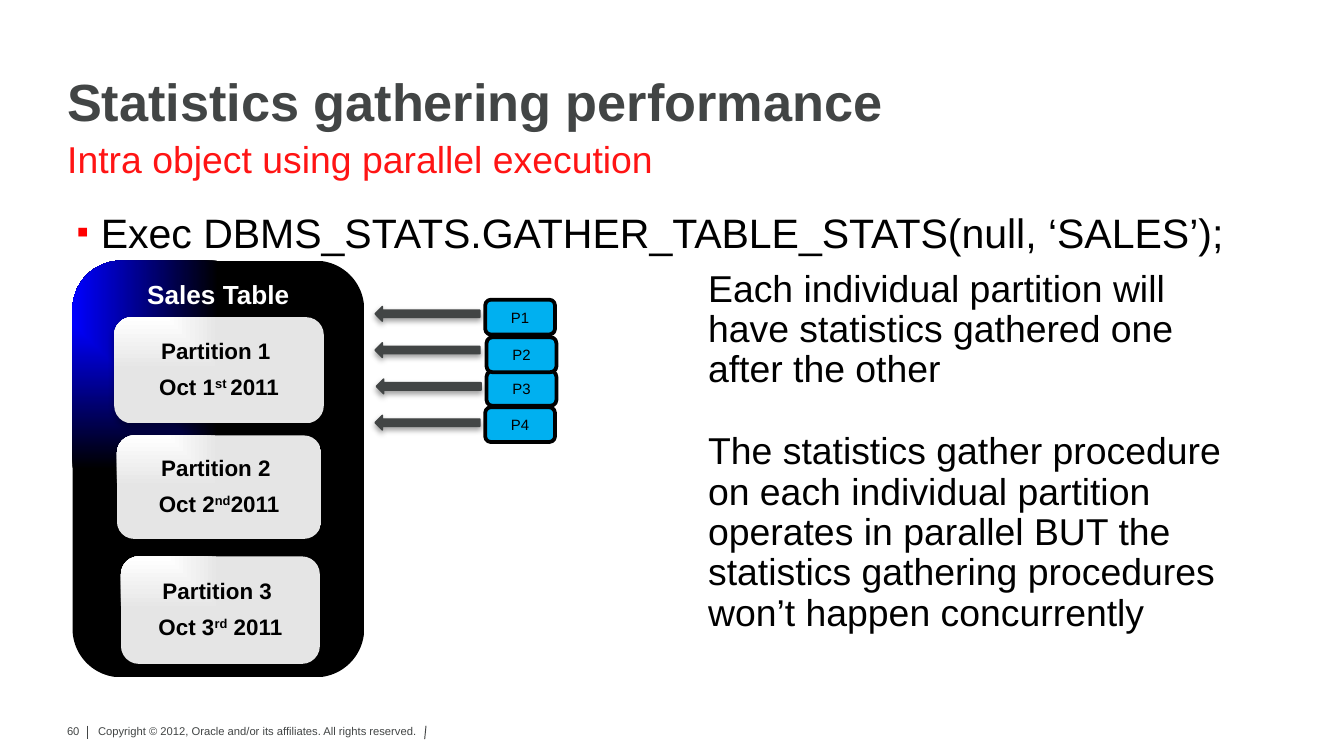
from lxml import etree
from pptx import Presentation
from pptx.dml.color import RGBColor
from pptx.enum import shapes, text
from pptx.oxml import parse_xml
from pptx.oxml.ns import nsdecls, qn
from pptx.util import Inches, Pt

GREY = "424545"
BLACK = "000000"
MSO = shapes.MSO_SHAPE
ALIGN = text.PP_ALIGN
ANCHOR = text.MSO_ANCHOR


def rgb(value):
    return RGBColor.from_string(value)


def place(shape, left, top, width, height):
    shape.left, shape.top = Inches(left), Inches(top)
    shape.width, shape.height = Inches(width), Inches(height)


def set_frame(shape, insets=(0.1, 0.05), anchor=ANCHOR.TOP, wrap=True):
    frame = shape.text_frame
    frame.margin_left = frame.margin_right = Inches(insets[0])
    frame.margin_top = frame.margin_bottom = Inches(insets[1])
    frame.vertical_anchor = anchor
    frame.word_wrap = wrap
    frame.auto_size = text.MSO_AUTO_SIZE.NONE
    return frame


def format_paragraph(paragraph, size, color, bold=False, align=ALIGN.LEFT,
                     spacing=1.0, before=0, after=0):
    paragraph.alignment = align
    paragraph.line_spacing = spacing
    paragraph.space_before, paragraph.space_after = Pt(before), Pt(after)
    font = paragraph.font
    font.name, font.size, font.bold = "Arial", Pt(size), bold
    font.color.rgb = rgb(color)


def set_bullet(paragraph, char=None, color=None, size=100, indent=0, hanging=0):
    """Give the paragraph a bullet, or remove the inherited one."""
    props = paragraph._p.get_or_add_pPr()
    props.set("marL", str(Inches(indent)))
    props.set("indent", str(-Inches(hanging)))
    if char is None:
        etree.SubElement(props, qn("a:buNone"))
        return
    bullet_color = etree.SubElement(props, qn("a:buClr"))
    etree.SubElement(bullet_color, qn("a:srgbClr"), val=color)
    etree.SubElement(props, qn("a:buSzPct"), val=str(size * 1000))
    etree.SubElement(props, qn("a:buFont"), typeface="Arial")
    etree.SubElement(props, qn("a:buChar"), char=char)


def fill_placeholder(placeholder, box, words, bullet=None, anchor=ANCHOR.TOP, **style):
    place(placeholder, *box)
    frame = set_frame(placeholder, (0, 0), anchor)
    frame.text = words
    paragraph = frame.paragraphs[0]
    set_bullet(paragraph, **(bullet or {}))
    format_paragraph(paragraph, **style)


def add_text(slide, box, words, insets=(0.1, 0.05), wrap=True, **style):
    textbox = slide.shapes.add_textbox(*map(Inches, box))
    frame = set_frame(textbox, insets, wrap=wrap)
    frame.text = words
    format_paragraph(frame.paragraphs[0], **style)


def add_shape(slide, preset, box, fill=None, line=None, line_width=0):
    shape = slide.shapes.add_shape(preset, *map(Inches, box))
    shape.shadow.inherit = False
    if fill:
        shape.fill.solid()
        shape.fill.fore_color.rgb = rgb(fill)
    if line:
        shape.line.color.rgb = rgb(line)
        shape.line.width = Pt(line_width)
    else:
        shape.line.fill.background()
    return shape


def add_shadow(shape, opacity, blur, distance):
    """Add a soft black shadow that falls straight down."""
    effects = shape._element.spPr.find(qn("a:effectLst"))
    shadow = etree.SubElement(
        effects, qn("a:outerShdw"), blurRad=str(Pt(blur)), dist=str(Pt(distance)),
        dir="5400000", rotWithShape="0")
    color = etree.SubElement(shadow, qn("a:srgbClr"), val=BLACK)
    etree.SubElement(color, qn("a:alpha"), val=str(opacity * 1000))


def fill_from_corner(shape, corner, rest):
    """Fill with a rectangular gradient that starts in the top left corner."""
    gradient = parse_xml(
        f'<a:gradFill {nsdecls("a")} rotWithShape="1"><a:gsLst>'
        f'<a:gs pos="0"><a:srgbClr val="{corner}"/></a:gs>'
        f'<a:gs pos="100000"><a:srgbClr val="{rest}"/></a:gs></a:gsLst>'
        '<a:path path="rect"><a:fillToRect r="100000" b="100000"/></a:path></a:gradFill>')
    shape._element.spPr.find(qn("a:prstGeom")).addnext(gradient)


def add_sales_table(slide):
    table = add_shape(slide, MSO.ROUNDED_RECTANGLE, (0.54, 1.94, 2.17, 3.1))
    fill_from_corner(table, "0000FF", BLACK)
    frame = set_frame(table)
    frame.text = "Sales Table"
    format_paragraph(frame.paragraphs[0], 14, "FFFFFF", True, ALIGN.CENTER, 0.9)


def add_partition(slide, box, name, day, ordinal, year):
    partition = add_shape(slide, MSO.ROUNDED_RECTANGLE, box)
    fill_from_corner(partition, "FFFFFF", "E5E5E5")
    add_shadow(partition, 32, 3.5, 2.2)
    frame = set_frame(partition, anchor=ANCHOR.MIDDLE)
    frame.text = name
    date = frame.add_paragraph()
    for part in (day, ordinal, year):
        run = date.add_run()
        run.text = part
        if part == ordinal:
            run._r.get_or_add_rPr().set("baseline", "30000")
    for paragraph, before in zip(frame.paragraphs, (0, 6)):
        format_paragraph(paragraph, 12, BLACK, True, ALIGN.CENTER, 0.9, before)


def add_process(slide, left, top, name):
    process = add_shape(slide, MSO.ROUNDED_RECTANGLE, (left, top, 0.52, 0.26),
                        "00B0F0", BLACK, 2)
    frame = set_frame(process, anchor=ANCHOR.MIDDLE)
    frame.text = name
    format_paragraph(frame.paragraphs[0], 8, BLACK, align=ALIGN.CENTER)


def add_arrow(slide, left, top):
    arrow = add_shape(slide, MSO.LEFT_ARROW, (left, top, 0.78, 0.11), GREY, GREY, 0.75)
    add_shadow(arrow, 38, 3.1, 1.6)


def add_footer(slide):
    add_text(slide, (0.69, 5.37, 2.74, 0.24),
             "Copyright © 2012, Oracle and/or its affiliates. All rights reserved.",
             insets=(0.04, 0.02), size=6, color=GREY)
    add_text(slide, (0.39, 5.34, 0.3, 0.2), "60", wrap=False,
             size=6, color=GREY, align=ALIGN.RIGHT)
    for top_x, bottom_x in ((0.65, 0.65), (3.17, 3.16)):
        divider = slide.shapes.add_connector(
            shapes.MSO_CONNECTOR.STRAIGHT,
            Inches(top_x), Inches(5.4), Inches(bottom_x), Inches(5.5))
        divider.line.color.rgb = rgb(GREY)
        divider.line.width = Pt(0.5)
        etree.SubElement(divider._element.spPr, qn("a:effectLst"))


def main():
    deck = Presentation()
    deck.slide_width = Inches(10)
    deck.slide_height = deck.slide_width * 9 // 16
    slide = deck.slides.add_slide(deck.slide_layouts[3])
    title, command, subtitle = slide.placeholders

    add_footer(slide)
    fill_placeholder(title, (0.5, 0.53, 9, 0.46), "Statistics gathering performance",
                     anchor=ANCHOR.BOTTOM, size=28, color=GREY, bold=True, spacing=0.9)
    fill_placeholder(command, (0.5, 1.54, 9, 3.35),
                     "Exec DBMS_STATS.GATHER_TABLE_STATS(null, ‘SALES’);",
                     bullet=dict(char="▪", color="FF0000", size=85,
                                 indent=0.25, hanging=0.18),
                     size=22, color=BLACK, after=6)
    fill_placeholder(subtitle, (0.5, 1.01, 9, 0.33),
                     "Intra object using parallel execution", size=20, color="FF1414")

    add_text(slide, (5.17, 3.17, 4.22, 1.62),
             "The statistics gather procedure on each individual partition operates in "
             "parallel BUT the statistics gathering procedures won’t happen concurrently",
             size=20, color=BLACK, spacing=0.9)
    add_text(slide, (5.17, 1.96, 4.02, 1.01),
             "Each individual partition will have statistics gathered one after the other",
             size=20, color=BLACK, spacing=0.9)

    processes = [(3.61, 2.23), (3.62, 2.51), (3.62, 2.76), (3.61, 3.03)]
    for number, (left, top) in reversed(list(enumerate(processes, 1))):
        add_process(slide, left, top, f"P{number}")
    for row, left in enumerate((2.79, 2.79, 2.8, 2.79)):
        add_arrow(slide, left, 2.28 + 0.27 * row)

    add_sales_table(slide)
    add_partition(slide, (0.85, 2.36, 1.56, 0.79), "Partition 1 ", "Oct 1", "st ", "2011")
    add_partition(slide, (0.87, 3.24, 1.52, 0.77), "Partition 2 ", "Oct 2", "nd", "2011")
    add_partition(slide, (0.9, 4.14, 1.48, 0.8), "Partition 3 ", "Oct 3", "rd", " 2011")

    deck.save("out.pptx")


if __name__ == "__main__":
    main()
